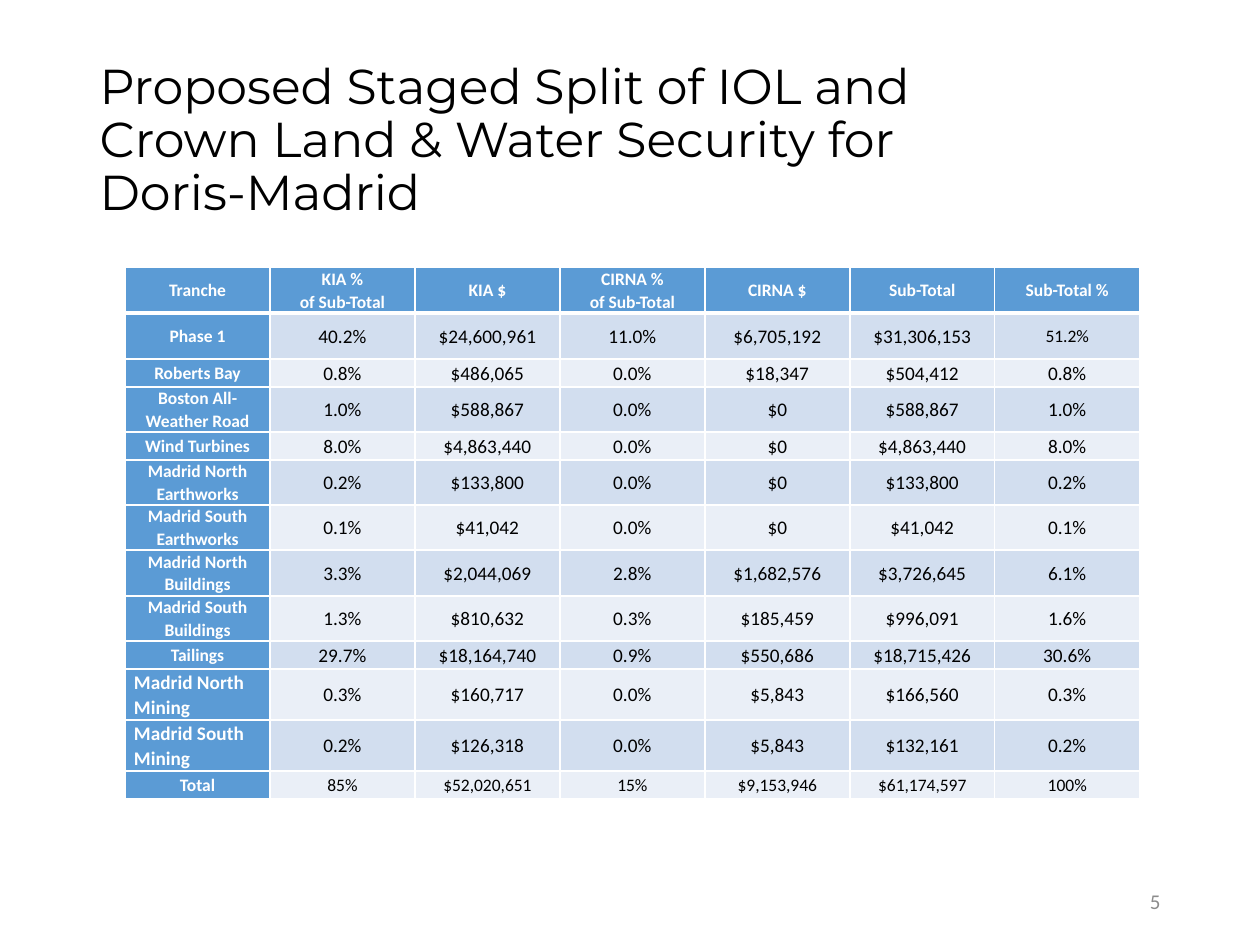
"""Build the slide on the staged split of land and water security."""
from lxml import etree
from pptx import Presentation
from pptx.dml.color import RGBColor
from pptx.enum.text import MSO_ANCHOR, MSO_AUTO_SIZE, PP_ALIGN
from pptx.oxml.ns import qn
from pptx.util import Emu, Pt

PX = 914400 // 126
LEFT, CENTER, RIGHT = PP_ALIGN.LEFT, PP_ALIGN.CENTER, PP_ALIGN.RIGHT
MIDDLE = MSO_ANCHOR.MIDDLE
WHITE, BLACK, BLUE, GREY = "FFFFFF", "000000", "5B9BD5", "8C8C8C"
BANDS = ["D2DEEF", "EAEFF7"]


def style(p, size, font, color, align=LEFT, bold=False):
    p.alignment = align
    p.font.size = Pt(size)
    p.font.name = font
    p.font.bold = bold
    p.font.color.rgb = RGBColor.from_string(color)


def border(cell, side, width):
    ln = etree.SubElement(cell._tc.get_or_add_tcPr(), qn(f"a:{side}"), w=str(Pt(width)))
    fill = etree.SubElement(ln, qn("a:solidFill"))
    etree.SubElement(fill, qn("a:srgbClr"), val=WHITE)


prs = Presentation()
prs.slide_width, prs.slide_height = Emu(1260 * PX), Emu(945 * PX)
s = prs.slides.add_slide(prs.slide_layouts[5])

title = s.shapes.title
title.left, title.top, title.width, title.height = [Emu(v * PX) for v in (87, 50, 910, 183)]
tf = title.text_frame
tf.text = "Proposed Staged Split of IOL and Crown Land & Water Security for Doris-Madrid"
tf.word_wrap = True
tf.auto_size = MSO_AUTO_SIZE.NONE
tf.vertical_anchor = MIDDLE
tf.paragraphs[0].line_spacing = 0.9
style(tf.paragraphs[0], 28, "Montserrat", BLACK)

page_number = s.shapes.add_textbox(*[Emu(v * PX) for v in (890, 876, 283, 50)])
tf = page_number.text_frame
tf.text = "5"
tf.word_wrap = True
tf.vertical_anchor = MIDDLE
style(tf.paragraphs[0], 12, "Calibri", GREY, RIGHT)

rows = [
    ("Tranche", "KIA %\nof Sub-Total", "KIA $", "CIRNA %\nof Sub-Total", "CIRNA $", "Sub-Total", "Sub-Total %"),
    ("Phase 1", "40.2%", "$24,600,961", "11.0%", "$6,705,192", "$31,306,153", "51.2%"),
    ("Roberts Bay", "0.8%", "$486,065", "0.0%", "$18,347", "$504,412", "0.8%"),
    ("Boston All-Weather Road", "1.0%", "$588,867", "0.0%", "$0", "$588,867", "1.0%"),
    ("Wind Turbines", "8.0%", "$4,863,440", "0.0%", "$0", "$4,863,440", "8.0%"),
    ("Madrid North Earthworks", "0.2%", "$133,800", "0.0%", "$0", "$133,800", "0.2%"),
    ("Madrid South Earthworks", "0.1%", "$41,042", "0.0%", "$0", "$41,042", "0.1%"),
    ("Madrid North Buildings", "3.3%", "$2,044,069", "2.8%", "$1,682,576", "$3,726,645", "6.1%"),
    ("Madrid South Buildings", "1.3%", "$810,632", "0.3%", "$185,459", "$996,091", "1.6%"),
    ("Tailings", "29.7%", "$18,164,740", "0.9%", "$550,686", "$18,715,426", "30.6%"),
    ("Madrid North Mining", "0.3%", "$160,717", "0.0%", "$5,843", "$166,560", "0.3%"),
    ("Madrid South Mining", "0.2%", "$126,318", "0.0%", "$5,843", "$132,161", "0.2%"),
    ("Total", "85%", "$52,020,651", "15%", "$9,153,946", "$61,174,597", "100%"),
]
heights = [46, 46, 28, 45, 28, 45, 45, 46, 45, 28, 51, 51, 28]
last_row, last_col = len(rows) - 1, len(rows[0]) - 1
frame = s.shapes.add_table(len(rows), len(rows[0]), Emu(125 * PX), Emu(267 * PX),
                           Emu(145 * PX * len(rows[0])), Emu(sum(heights) * PX))
table = frame.table
for col in table.columns:
    col.width = Emu(145 * PX)

for i, row in enumerate(rows):
    table.rows[i].height = Emu(heights[i] * PX)
    for j, text in enumerate(row):
        cell = table.cell(i, j)
        heading = i == 0 or j == 0
        mining = j == 0 and text.endswith("Mining")
        small = (heading and not mining) or i == last_row or (i == 1 and j == last_col)
        cell.margin_left = cell.margin_right = Emu(9 * PX)
        cell.margin_top = cell.margin_bottom = 0
        cell.vertical_anchor = MIDDLE
        for side in ("lnL", "lnR", "lnT", "lnB"):
            thick = (i == 0 and side == "lnB") or (i == 1 and side == "lnT")
            border(cell, side, 3 if thick else 1)
        cell.fill.solid()
        cell.fill.fore_color.rgb = RGBColor.from_string(BLUE if heading else BANDS[(i - 1) % 2])
        cell.text = text
        for p in cell.text_frame.paragraphs:
            p.line_spacing = 1.07
            style(p, 10 if small else 11, "Calibri", WHITE if heading else BLACK,
                  LEFT if mining else CENTER, heading)

prs.save("out.pptx")
